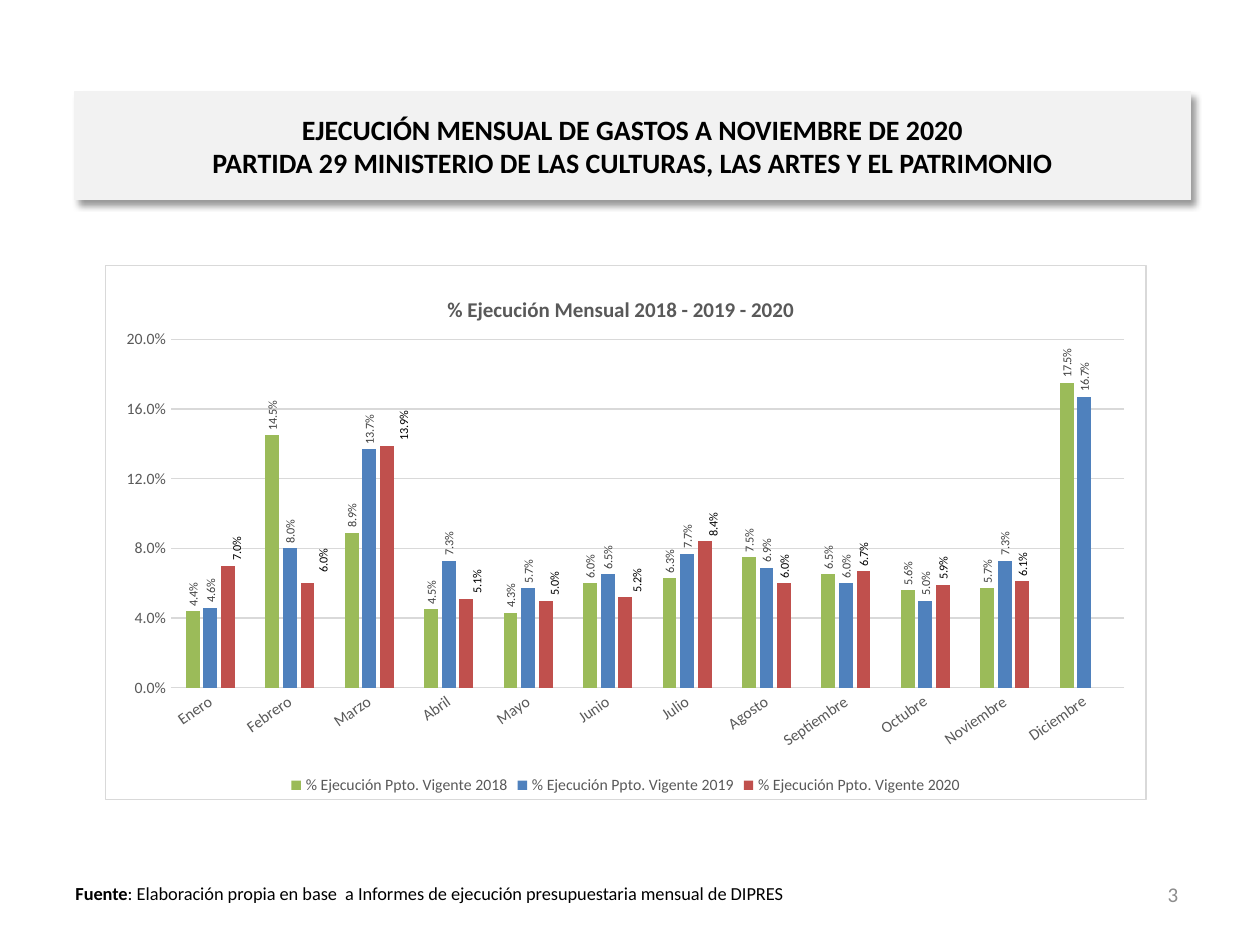
from lxml import etree
from pptx import Presentation
from pptx.chart.data import CategoryChartData
from pptx.dml.color import RGBColor
from pptx.enum.chart import XL_CHART_TYPE as ChartType, XL_LABEL_POSITION as LabelPosition
from pptx.enum.chart import XL_LEGEND_POSITION as LegendPosition, XL_TICK_MARK as TickMark
from pptx.enum.text import MSO_ANCHOR as Anchor, PP_ALIGN as Align
from pptx.oxml import parse_xml
from pptx.oxml.ns import nsdecls, qn
from pptx.util import Inches, Pt

COLORS = {
    "black": "000000", "white": "FFFFFF", "banner": "F2F2F2", "page": "8C8C8C",
    "axis": "595959", "label": "404040", "grid": "D9D9D9",
    "2018": "9BBB59", "2019": "4F81BD", "2020": "C0504D",
}
MONTHS = ["Enero", "Febrero", "Marzo", "Abril", "Mayo", "Junio", "Julio", "Agosto",
          "Septiembre", "Octubre", "Noviembre", "Diciembre"]
EXECUTION = {
    "2018": [0.044, 0.145, 0.089, 0.045, 0.043, 0.06, 0.063, 0.075, 0.065, 0.056, 0.057, 0.175],
    "2019": [0.046, 0.08, 0.137, 0.073, 0.057, 0.065, 0.077, 0.069, 0.06, 0.05, 0.073, 0.167],
    "2020": [0.07, 0.06, 0.139, 0.051, 0.05, 0.052, 0.084, 0.06, 0.067, 0.059, 0.061, None],
}
LABEL_SHIFTS = [(0.8, 0), (1.5, -1.1), (1.6, 0), (1, 0), (0.8, 0), (1.1, 0), (0.8, 0)]


def style(font, size, color, bold=False):
    font.name = "Calibri"
    font.size = Pt(size)
    font.bold = bold
    font.color.rgb = RGBColor.from_string(COLORS[color])


def layout_xml(**percents):
    layout = parse_xml(f"<c:layout {nsdecls('c')}><c:manualLayout/></c:layout>")
    for tag, value in percents.items():
        text = value if isinstance(value, str) else str(round(value / 100, 4))
        etree.SubElement(layout[0], qn(f"c:{tag}")).set("val", text)
    return layout


prs = Presentation()
prs.slide_width, prs.slide_height = Inches(10), Inches(7.5)
column, row = prs.slide_width / 100, prs.slide_height / 100
slide = prs.slides.add_slide(prs.slide_layouts[5])

source = slide.shapes.add_textbox(
    int(5 * column), int(92.67 * row), int(59.1 * column), int(3.73 * row)).text_frame
source.word_wrap = True
for text, bold in [
    ("Fuente", True),
    (": Elaboración propia en base  a Informes de ejecución presupuestaria mensual de DIPRES", False),
]:
    run = source.paragraphs[0].add_run()
    run.text = text
    style(run.font, 10.5, "black", bold)

banner = slide.shapes.title
banner.left, banner.top = int(5.9 * column), int(9.75 * row)
banner.width, banner.height = int(88.6 * column), int(11.4 * row)
banner.fill.solid()
banner.fill.fore_color.rgb = RGBColor.from_string(COLORS["banner"])
banner.line.color.rgb = RGBColor.from_string(COLORS["banner"])
banner.line.width = Pt(0.75)
banner._element.spPr.append(parse_xml(
    f"<a:effectLst {nsdecls('a')}>"
    f'<a:outerShdw blurRad="{Pt(4)}" dist="{Pt(3)}" dir="2700000" algn="tl" rotWithShape="0">'
    f'<a:srgbClr val="{COLORS["black"]}"><a:alpha val="40000"/></a:srgbClr>'
    "</a:outerShdw></a:effectLst>"))
banner.text_frame.text = ("EJECUCIÓN MENSUAL DE GASTOS A NOVIEMBRE DE 2020\v"
                          "PARTIDA 29 MINISTERIO DE LAS CULTURAS, LAS ARTES Y EL PATRIMONIO")
banner.text_frame.word_wrap = True
banner.text_frame.vertical_anchor = Anchor.MIDDLE
heading = banner.text_frame.paragraphs[0]
heading.alignment = Align.CENTER
style(heading.font, 16, "black", True)

page = slide.shapes.add_textbox(
    int(71.2 * column), int(92 * row), int(23.3 * column), int(5.33 * row)).text_frame
page.word_wrap = True
page.vertical_anchor = Anchor.MIDDLE
page.text = "3"
page.paragraphs[0].alignment = Align.RIGHT
style(page.paragraphs[0].font, 12, "page")

monthly = CategoryChartData(number_format="0.0%")
monthly.categories = MONTHS
for year, values in EXECUTION.items():
    monthly.add_series(f"% Ejecución Ppto. Vigente {year}", values)
chart = slide.shapes.add_chart(
    ChartType.COLUMN_CLUSTERED, int(8.3 * column), int(28 * row),
    int(82.7 * column), int(56.67 * row), monthly).chart
style(chart.font, 10, "black")
chart._chartSpace.find(qn("c:chart")).addnext(parse_xml(
    f"<c:spPr {nsdecls('c', 'a')}>"
    f'<a:solidFill><a:srgbClr val="{COLORS["white"]}"/></a:solidFill>'
    f'<a:ln w="{Pt(0.75)}"><a:solidFill><a:srgbClr val="{COLORS["grid"]}"/></a:solidFill></a:ln>'
    "</c:spPr>"))

chart.has_title = True
chart.chart_title.text_frame.text = "% Ejecución Mensual 2018 - 2019 - 2020"
style(chart.chart_title.text_frame.paragraphs[0].font, 12, "axis", True)
chart.chart_title.include_in_layout = False
chart_title = chart.chart_title._element
for automatic in chart_title.findall(qn("c:layout")):
    chart_title.remove(automatic)
chart_title.find(qn("c:tx")).addnext(layout_xml(xMode="edge", yMode="edge", x=32.5, y=5))

chart.has_legend = True
chart.legend.position = LegendPosition.BOTTOM
chart.legend.include_in_layout = False
style(chart.legend.font, 9, "axis")

plot_area = chart._chartSpace.find(qn("c:chart")).find(qn("c:plotArea"))
for automatic in plot_area.findall(qn("c:layout")):
    plot_area.remove(automatic)
plot_area.insert(0, layout_xml(layoutTarget="inner", xMode="edge", yMode="edge",
                               x=6.3, y=13.9, w=91.6, h=65.2))

months_axis, share_axis = chart.category_axis, chart.value_axis
for axis in (months_axis, share_axis):
    axis.major_tick_mark = axis.minor_tick_mark = TickMark.NONE
    style(axis.tick_labels.font, 9, "axis")
months_axis._element.find(qn("c:txPr")).find(qn("a:bodyPr")).set("rot", str(-35 * 60000))
share_axis.minimum_scale, share_axis.maximum_scale, share_axis.major_unit = 0, 0.2, 0.04
share_axis.tick_labels.number_format = "0.0%"
share_axis.tick_labels.number_format_is_linked = False
share_axis.has_major_gridlines = True
share_axis.format.line.fill.background()
for line in (months_axis.format.line, share_axis.major_gridlines.format.line):
    line.color.rgb = RGBColor.from_string(COLORS["grid"])
    line.width = Pt(0.75)

plot = chart.plots[0]
plot.gap_width, plot.overlap, plot.vary_by_categories = 219, -27, False
for year, series in zip(EXECUTION, plot.series):
    series.format.fill.solid()
    series.format.fill.fore_color.rgb = RGBColor.from_string(COLORS[year])
    label_color = "black" if year == "2020" else "label"
    labels = series.data_labels
    labels.show_value = True
    labels.number_format, labels.number_format_is_linked = "0.0%", False
    shifts = LABEL_SHIFTS if year == "2020" else []
    shifted = [series.points[month].data_label for month in range(len(shifts))]
    for label in [labels, *shifted]:
        label.position = LabelPosition.OUTSIDE_END
        style(label.font, 7, label_color)
    for body in series._element.iter(qn("a:bodyPr")):
        body.set("rot", str(-90 * 60000))
        body.set("vert", "horz")
    for index, (x, y) in zip(series._element.xpath("c:dLbls/c:dLbl/c:idx"), shifts):
        index.addnext(layout_xml(x=x, y=y))

prs.save("out.pptx")
